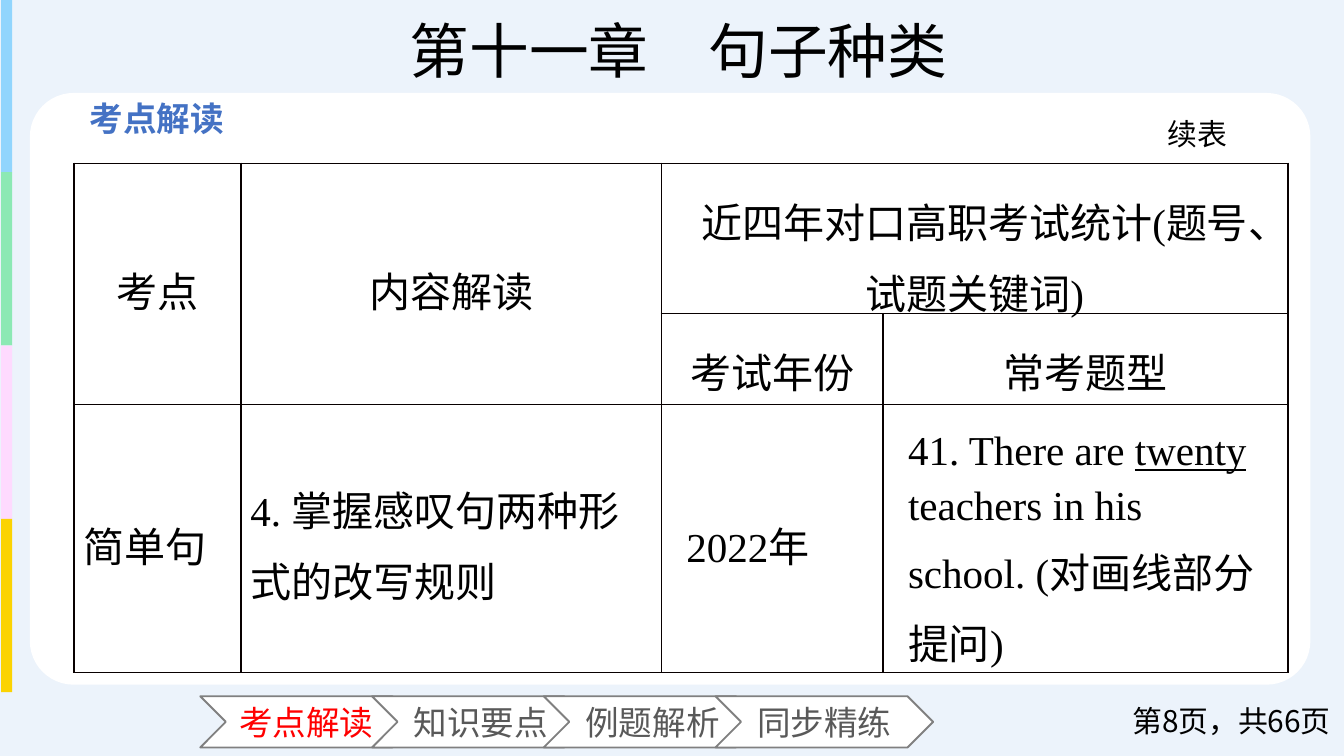
from pptx import Presentation
from pptx.dml.color import RGBColor
from pptx.enum.shapes import MSO_SHAPE
from pptx.enum.text import MSO_ANCHOR, MSO_AUTO_SIZE, PP_ALIGN
from pptx.oxml.ns import qn
from pptx.util import Pt
from lxml import etree

RECTANGLE, ROUNDED, CHEVRON = MSO_SHAPE.RECTANGLE, MSO_SHAPE.ROUNDED_RECTANGLE, MSO_SHAPE.CHEVRON
LEFT, CENTER, RIGHT, JUSTIFY = PP_ALIGN.LEFT, PP_ALIGN.CENTER, PP_ALIGN.RIGHT, PP_ALIGN.JUSTIFY
TOP, MIDDLE = MSO_ANCHOR.TOP, MSO_ANCHOR.MIDDLE
NO_AUTOFIT = MSO_AUTO_SIZE.NONE
SANS, SERIF = "Noto Sans CJK SC", "Times New Roman"
BLACK, WHITE = "000000", "FFFFFF"


def color(value):
    return RGBColor.from_string(value)


def write(frame, text, size=18, font=SANS, ink=BLACK, bold=False,
          align=LEFT, anchor=TOP, spacing=None):
    """Fill a text frame; text is a string or a list of (string, underlined) spans."""
    frame.word_wrap = True
    frame.vertical_anchor = anchor
    para = frame.paragraphs[0]
    para.alignment = align
    if spacing:
        para.line_spacing = spacing
    spans = [(text, False)] if isinstance(text, str) else text
    for words, underlined in spans:
        span = para.add_run()
        span.text = words
        span.font.size = Pt(size)
        span.font.name = font
        span.font.bold = bold
        span.font.underline = underlined
        span.font.color.rgb = color(ink)
        east_asian = etree.SubElement(span.font._element, qn("a:ea"))
        east_asian.set("typeface", SANS)


def draw_borders(cell, ink, width):
    properties = cell._tc.get_or_add_tcPr()
    for position, side in enumerate(("a:lnL", "a:lnR", "a:lnT", "a:lnB")):
        line = etree.Element(qn(side), w=str(Pt(width)))
        fill = etree.SubElement(line, qn("a:solidFill"))
        etree.SubElement(fill, qn("a:srgbClr"), val=ink)
        properties.insert(position, line)


class SlideBuilder:
    def __init__(self, slide):
        self.slide = slide

    def shape(self, kind, left, top, width, height, fill, outline=None):
        shape = self.slide.shapes.add_shape(kind, Pt(left), Pt(top), Pt(width), Pt(height))
        shape.shadow.inherit = False
        shape.fill.solid()
        shape.fill.fore_color.rgb = color(fill)
        if outline:
            shape.line.color.rgb = color(outline)
            shape.line.width = Pt(1)
        else:
            shape.line.fill.background()
        return shape

    def text(self, text, left, top, width, height, **style):
        box = self.slide.shapes.add_textbox(Pt(left), Pt(top), Pt(width), Pt(height))
        write(box.text_frame, text, **style)

    def title(self, text, left, top, width, height, **style):
        title = self.slide.shapes.title
        title.left, title.top, title.width, title.height = map(Pt, (left, top, width, height))
        title.text_frame.auto_size = NO_AUTOFIT
        write(title.text_frame, text, **style)
        # The placeholder comes first in the tree; move it above the background.
        self.slide.shapes._spTree.append(title._element)

    def table(self, left, top, columns, rows):
        frame = self.slide.shapes.add_table(len(rows), len(columns), Pt(left), Pt(top),
                                            Pt(sum(columns)), Pt(sum(rows)))
        table = frame.table
        table.first_row = table.horz_banding = False
        for column, width in zip(table.columns, columns):
            column.width = Pt(width)
        for row, height in zip(table.rows, rows):
            row.height = Pt(height)
        for cell in table.iter_cells():
            cell.fill.background()
            draw_borders(cell, "080000", 1)
        return table

    def cell(self, cell, text, align=LEFT, side=13.4, edge=8.5):
        cell.margin_left = cell.margin_right = Pt(side)
        cell.margin_top = cell.margin_bottom = Pt(edge)
        cell.vertical_anchor = MIDDLE
        write(cell.text_frame, text, size=22, font=SERIF, align=align,
              anchor=None, spacing=1.2)


def main():
    deck = Presentation()
    deck.slide_width, deck.slide_height = Pt(720), Pt(405)
    page = SlideBuilder(deck.slides.add_slide(deck.slide_layouts[5]))

    page.shape(RECTANGLE, 0, 0, 720, 405, "ECF3FB")
    stripe_height = 92.9
    for index, fill in enumerate(("91D5FD", "8CE9B4", "FEDAFE", "FBD302")):
        page.shape(RECTANGLE, 0.6, -0.7 + index * stripe_height, 6, stripe_height, fill)
    panel = page.shape(ROUNDED, 16, 49.8, 686, 317, WHITE)
    panel.adjustments[0] = 0.074

    page.text("考点解读", 41, 49, 104.4, 24.5, ink="4472C4", bold=True)
    for index, label in enumerate(("考点解读", "知识要点", "例题解析", "同步精练")):
        current = index == 0
        step = page.shape(CHEVRON, 107.3 + index * 92, 373, 116.6, 27.4, WHITE, "808080")
        write(step.text_frame, label, ink="FF0000" if current else "595959",
              align=JUSTIFY if current else CENTER, anchor=MIDDLE)
    page.title("第十一章\u3000句子种类".replace("\u3000", "　"), 126.7, 3.6, 473.8, 46,
               size=32, font=SERIF, align=CENTER, anchor=MIDDLE)
    page.text("第8页，共66页", 573.8, 375, 146.2, 21.6, size=16, align=RIGHT, anchor=MIDDLE)

    table = page.table(39.8, 87.6, (89.3, 225.2, 118.8, 217), (80.4, 48.4, 143.5))
    table.cell(0, 0).merge(table.cell(1, 0))
    table.cell(0, 1).merge(table.cell(1, 1))
    table.cell(0, 2).merge(table.cell(0, 3))
    headings = {(0, 0): "考点", (0, 1): "内容解读",
                (0, 2): "近四年对口高职考试统计(题号、试题关键词)",
                (1, 2): "考试年份", (1, 3): "常考题型"}
    for place, heading in headings.items():
        page.cell(table.cell(*place), heading, align=CENTER)
    page.cell(table.cell(2, 0), "简单句", side=5, edge=0)
    page.cell(table.cell(2, 1), "4. 掌握感叹句两种形式的改写规则", side=5, edge=0)
    page.cell(table.cell(2, 2), "2022年")
    page.cell(table.cell(2, 3), [("41. There are ", False), ("twenty ", True),
                                 ("teachers in his school. (对画线部分提问)", False)])

    page.text("续表", 618.5, 58.3, 55.4, 19.4, size=16)
    deck.save("out.pptx")


if __name__ == "__main__":
    main()
